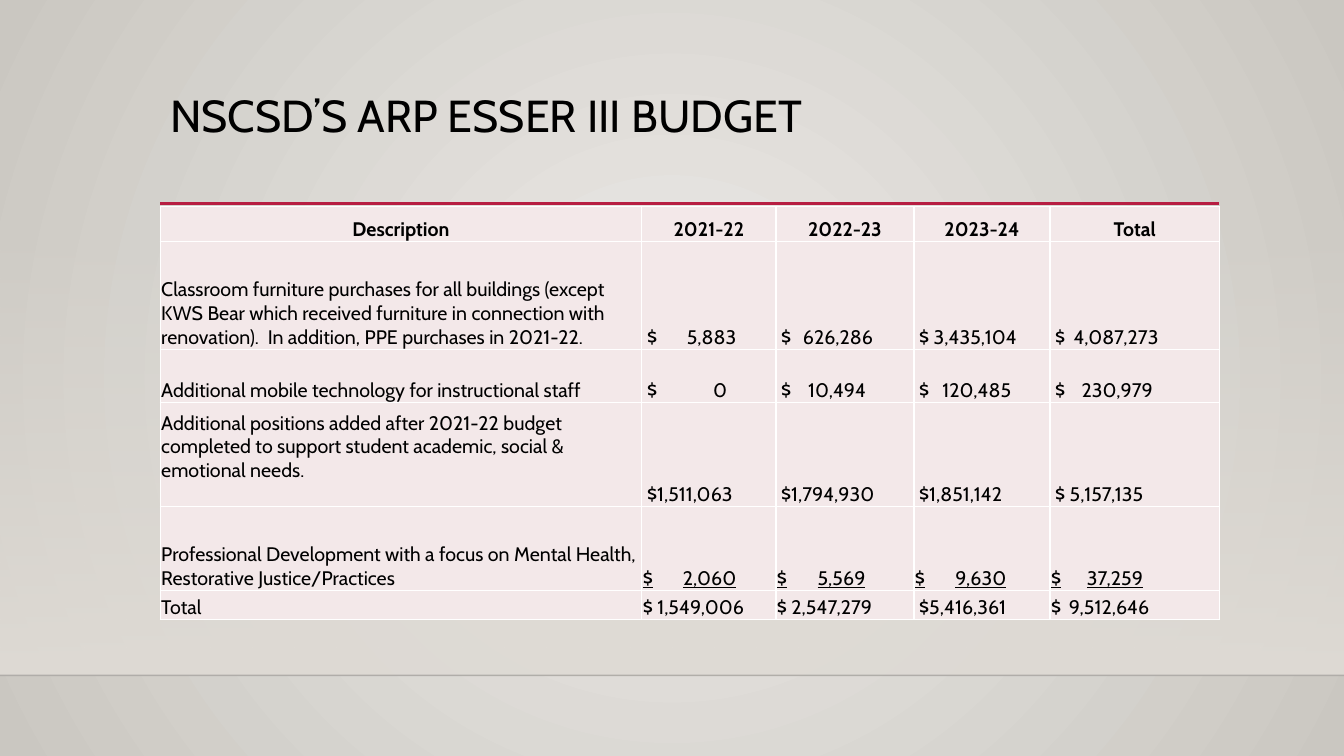
from dataclasses import dataclass
from typing import Optional

from lxml.etree import SubElement
from pptx import Presentation
from pptx.dml.color import RGBColor
from pptx.enum.shapes import MSO_CONNECTOR, MSO_SHAPE
from pptx.enum.text import MSO_ANCHOR, PP_ALIGN
from pptx.oxml import parse_xml
from pptx.oxml.ns import nsdecls, qn
from pptx.util import Pt


@dataclass(frozen=True)
class Theme:
    font: str = "Cabin"
    ink: str = "000000"
    accent: str = "B71E42"
    cell: str = "F3E8E9"
    border: str = "FFFFFF"
    glow: str = "ECEAE7"
    edge: str = "CAC7C1"
    wall: str = "DFDBD5"
    floor_line: str = "000001"
    title_size: float = 32
    table_size: float = 14


@dataclass(frozen=True)
class Entry:
    text: str
    tab: Optional[float] = None
    indent: float = 0
    lift: float = 0
    bold: bool = False
    underline: bool = False
    center: bool = False


@dataclass(frozen=True)
class Rule:
    x1: float
    x2: float
    y: float
    color: str
    width: float
    opacity: int = 100


THEME = Theme()
WIDTH, HEIGHT = 960, 540
TABLE_LEFT, TABLE_TOP = 114.5, 147.3
COLUMNS = [344, 95.8, 98.6, 97.2, 121]
ROW_HEIGHTS = [25.2, 77.1, 37.9, 74.3, 60, 20.7]
INSET, SPACE = 0.7, 3

RULES = [
    Rule(0, WIDTH, 482.4, THEME.floor_line, 1, 20),
    Rule(114.5, 871, 145.4, THEME.accent, 2.5),
]


def amount(value: str, edge: float, indent: float = SPACE, underline: bool = False) -> Entry:
    return Entry(f"$\t{value}", edge - indent - INSET, indent, underline=underline)


ROWS = [
    [Entry(t, bold=True, center=True)
     for t in ("Description", "2021-22", "2022-23", "2023-24", "Total")],
    [Entry("Classroom furniture purchases for all buildings (except KWS Bear which "
           "received furniture in connection with renovation).  In addition, PPE "
           "purchases in 2021-22."),
     amount("5,883", 67.5), amount("626,286", 69.5),
     Entry("$ 3,435,104", indent=SPACE), amount("4,087,273", 77.5)],
    [Entry("Additional mobile technology for instructional staff"),
     amount("0", 61), amount("10,494", 64.5),
     amount("120,485", 69.5), amount("230,979", 73.5)],
    [Entry("Additional positions added after 2021-22 budget completed to support "
           "student academic, social & emotional needs.", lift=17),
     *(Entry(t, indent=SPACE)
       for t in ("$1,511,063", "$1,794,930", "$1,851,142", "$ 5,157,135"))],
    [Entry("Professional Development with a focus on Mental Health, "
           "Restorative Justice/Practices"),
     *(amount(v, edge, 0, True)
       for v, edge in (("2,060", 67.5), ("5,569", 64), ("9,630", 66), ("37,259", 66.5)))],
    [Entry("Total"), Entry("$ 1,549,006"), Entry("$ 2,547,279"),
     Entry("$5,416,361", indent=SPACE), amount("9,512,646", 71, 0)],
]


def gradient(start: str, end: str, direction: str, start_alpha: int = 100):
    return parse_xml(
        f'<a:gradFill {nsdecls("a")} rotWithShape="1"><a:gsLst>'
        f'<a:gs pos="0"><a:srgbClr val="{start}"><a:alpha val="{start_alpha * 1000}"/>'
        f'</a:srgbClr></a:gs><a:gs pos="100000"><a:srgbClr val="{end}"/></a:gs>'
        f'</a:gsLst>{direction}</a:gradFill>')


def paint_backdrop(s) -> None:
    fill = s.background.fill
    fill.gradient()
    bg_pr = s._element.find(f'.//{qn("p:bgPr")}')
    circle = ('<a:path path="circle"><a:fillToRect l="50000" t="50000" '
              'r="50000" b="50000"/></a:path>')
    bg_pr.replace(bg_pr.find(qn("a:gradFill")), gradient(THEME.glow, THEME.edge, circle))

    wall = s.shapes.add_shape(MSO_SHAPE.RECTANGLE, 0, Pt(159), Pt(WIDTH), Pt(323.4))
    wall.shadow.inherit = False
    wall.line.fill.background()
    wall.fill.gradient()
    sp_pr = wall._element.spPr
    sp_pr.replace(sp_pr.find(qn("a:gradFill")),
                  gradient(THEME.wall, THEME.wall, '<a:lin ang="5400000" scaled="0"/>', 0))


def draw_rule(s, rule: Rule) -> None:
    line = s.shapes.add_connector(MSO_CONNECTOR.STRAIGHT, Pt(rule.x1), Pt(rule.y),
                                  Pt(rule.x2), Pt(rule.y))
    line.line.width = Pt(rule.width)
    line.line.color.rgb = RGBColor.from_string(rule.color)
    sp_pr = line._element.spPr
    if rule.opacity < 100:
        color = sp_pr.find(f'.//{qn("a:srgbClr")}')
        SubElement(color, qn("a:alpha")).set("val", str(rule.opacity * 1000))
    SubElement(sp_pr, qn("a:effectLst"))


def style_font(p, size: float) -> None:
    p.font.name = THEME.font
    p.font.size = Pt(size)
    p.font.color.rgb = RGBColor.from_string(THEME.ink)


def draw_title(s, text: str) -> None:
    tf = s.shapes.add_textbox(Pt(114.5), Pt(63.4), Pt(756), Pt(47.5)).text_frame
    tf.word_wrap = True
    p = tf.paragraphs[0]
    p.text = text
    p.line_spacing = 0.9
    style_font(p, THEME.title_size)


def fill_cell(cell, entry: Entry) -> None:
    cell.margin_left = Pt(INSET + entry.indent)
    cell.margin_right = cell.margin_top = Pt(INSET)
    cell.margin_bottom = Pt(entry.lift)
    cell.vertical_anchor = MSO_ANCHOR.BOTTOM
    p = cell.text_frame.paragraphs[0]
    p.text = entry.text
    p.alignment = PP_ALIGN.CENTER if entry.center else PP_ALIGN.LEFT
    if entry.tab is not None:
        tabs = SubElement(p._p.get_or_add_pPr(), qn("a:tabLst"))
        tab = SubElement(tabs, qn("a:tab"))
        tab.set("pos", str(Pt(entry.tab)))
        tab.set("algn", "r")
    style_font(p, THEME.table_size)
    p.font.bold = entry.bold
    p.font.underline = entry.underline
    tc_pr = cell._tc.get_or_add_tcPr()
    for side in ("lnL", "lnR", "lnT", "lnB"):
        tc_pr.append(parse_xml(
            f'<a:{side} {nsdecls("a")} w="{Pt(1)}"><a:solidFill>'
            f'<a:srgbClr val="{THEME.border}"/></a:solidFill></a:{side}>'))
    cell.fill.solid()
    cell.fill.fore_color.rgb = RGBColor.from_string(THEME.cell)


def draw_table(s) -> None:
    table = s.shapes.add_table(len(ROWS), len(COLUMNS), Pt(TABLE_LEFT), Pt(TABLE_TOP),
                               Pt(sum(COLUMNS)), Pt(sum(ROW_HEIGHTS))).table
    table.first_row = table.horz_banding = False
    for column, width in zip(table.columns, COLUMNS):
        column.width = Pt(width)
    for row, height, entries in zip(table.rows, ROW_HEIGHTS, ROWS):
        row.height = Pt(height)
        for cell, entry in zip(row.cells, entries):
            fill_cell(cell, entry)


def main() -> None:
    prs = Presentation()
    prs.slide_width, prs.slide_height = Pt(WIDTH), Pt(HEIGHT)
    s = prs.slides.add_slide(prs.slide_layouts[6])
    paint_backdrop(s)
    for rule in RULES:
        draw_rule(s, rule)
    draw_title(s, "NSCSD’S ARP ESSER III BUDGET")
    draw_table(s)
    prs.save("out.pptx")


if __name__ == "__main__":
    main()
